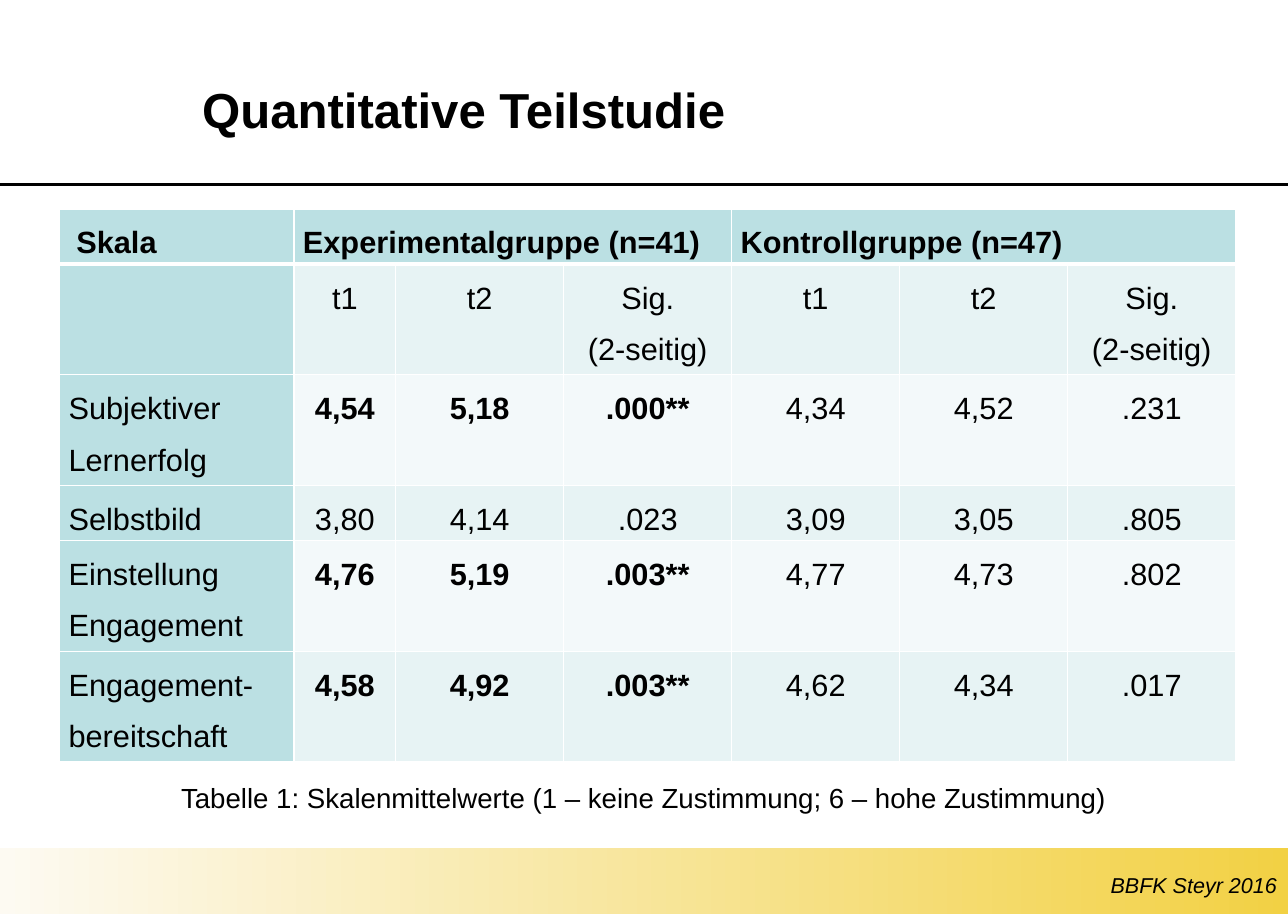
import pptx
import pptx.util
import pptx.dml.color
import pptx.enum.shapes
import pptx.enum.text
import pptx.oxml
import pptx.oxml.ns
from pptx.util import Inches

TITLE = "Quantitative Teilstudie"
CAPTION = "Tabelle 1: Skalenmittelwerte (1 – keine Zustimmung; 6 – hohe Zustimmung)"
FOOTER = "BBFK Steyr 2016"
MEASURES = ["t1", "t2", "Sig.\v(2-seitig)"]
ROWS = [
    ["Skala", "Experimentalgruppe (n=41)", "", "", "Kontrollgruppe (n=47)", "", ""],
    ["", *MEASURES, *MEASURES],
    ["Subjektiver Lernerfolg", "4,54", "5,18", ".000**", "4,34", "4,52", ".231"],
    ["Selbstbild", "3,80", "4,14", ".023", "3,09", "3,05", ".805"],
    ["Einstellung Engagement", "4,76", "5,19", ".003**", "4,77", "4,73", ".802"],
    ["Engagement-bereitschaft", "4,58", "4,92", ".003**", "4,62", "4,34", ".017"],
]
COL_WIDTHS = [2.12, 0.92] + [1.52] * 5
ROW_HEIGHTS = [0.49, 1, 1, 0.5, 1, 1]
GROUP_COLS = [(1, 3), (4, 6)]
THEME = {
    "font": "Arial", "text": "000000", "border": "FFFFFF",
    "head": "BBE0E3", "bands": ["F3F9FA", "E7F3F4"],
    "bar": ["FDFAF2", "F2D144"],
    "title": 32, "table": 20, "caption": 18, "footer": 14,
}
ALIGN = pptx.enum.text.PP_ALIGN
ANCHOR = pptx.enum.text.MSO_ANCHOR
WIDTH, HEIGHT = 11.65, 8.27


def color(value):
    return pptx.dml.color.RGBColor.from_string(value)


def write(tf, text, size, align=ALIGN.LEFT, bold=False, italic=False, spacing=None):
    p = tf.paragraphs[0]
    p.text = text
    p.alignment = align
    p.line_spacing = spacing
    for font in [p.font] + [r.font for r in p.runs]:
        font.name = THEME["font"]
        font.size = pptx.util.Pt(size)
        font.bold = bold
        font.italic = italic
        font.color.rgb = color(THEME["text"])


def add_text(s, box, text, size, anchor=ANCHOR.TOP, wrap=True, **fmt):
    tf = s.shapes.add_textbox(*map(Inches, box)).text_frame
    tf.word_wrap = wrap
    tf.vertical_anchor = anchor
    write(tf, text, size, **fmt)


def set_borders(cell, top, bottom):
    tc_pr = cell._tc.get_or_add_tcPr()
    for side, points in zip("LRTB", (1, 1, top, bottom)):
        tc_pr.append(pptx.oxml.parse_xml(
            f'<a:ln{side} {pptx.oxml.ns.nsdecls("a")} w="{pptx.util.Pt(points)}"><a:solidFill>'
            f'<a:srgbClr val="{THEME["border"]}"/></a:solidFill></a:ln{side}>'))


def add_frame(s):
    bar = s.shapes.add_shape(pptx.enum.shapes.MSO_SHAPE.RECTANGLE,
                             *map(Inches, (0, 7.67, WIDTH, 0.6)))
    bar.shadow.inherit = False
    bar.line.fill.background()
    bar.fill.gradient()
    bar.fill.gradient_angle = 0
    for stop, position, value in zip(bar.fill.gradient_stops, (0, 1), THEME["bar"]):
        stop.position = position
        stop.color.rgb = color(value)
    rule = s.shapes.add_connector(pptx.enum.shapes.MSO_CONNECTOR.STRAIGHT,
                                  *map(Inches, (0, 1.67, WIDTH, 1.67)))
    rule.line.color.rgb = color(THEME["text"])
    rule.line.width = pptx.util.Pt(2.25)
    rule._element.spPr.append(
        pptx.oxml.parse_xml(f'<a:effectLst {pptx.oxml.ns.nsdecls("a")}/>'))
    add_text(s, (6.06, 7.84, 5.59, 0.35), FOOTER, THEME["footer"],
             align=ALIGN.RIGHT, italic=True)


def add_scale_table(s):
    box = map(Inches, (0.54, 1.89, sum(COL_WIDTHS), sum(ROW_HEIGHTS)))
    table = s.shapes.add_table(len(ROWS), len(COL_WIDTHS), *box).table
    for column, width in zip(table.columns, COL_WIDTHS):
        column.width = Inches(width)
    for row, height in zip(table.rows, ROW_HEIGHTS):
        row.height = Inches(height)
    for first, last in GROUP_COLS:
        table.cell(0, first).merge(table.cell(0, last))
    for i, values in enumerate(ROWS):
        significant = values[3].endswith("**")
        for j, value in enumerate(values):
            cell = table.cell(i, j)
            heading = i == 0 or j == 0
            cell.margin_left = Inches(0.15 if i == j == 0 else 0.08)
            cell.margin_right = Inches(0.08)
            cell.margin_top = cell.margin_bottom = 0
            set_borders(cell, 3 if i == 1 else 1, 3 if i == 0 else 1)
            cell.fill.solid()
            cell.fill.fore_color.rgb = color(THEME["head"] if heading else THEME["bands"][i % 2])
            write(cell.text_frame, value, THEME["table"], spacing=1.5,
                  align=ALIGN.JUSTIFY if heading else ALIGN.CENTER,
                  bold=i == 0 or (significant and 1 <= j <= 3))


def main():
    prs = pptx.Presentation()
    prs.slide_width, prs.slide_height = Inches(WIDTH), Inches(HEIGHT)
    s = prs.slides.add_slide(prs.slide_layouts[6])
    add_frame(s)
    add_scale_table(s)
    add_text(s, (1.73, 0.32, 7.87, 1.33), TITLE, THEME["title"],
             anchor=ANCHOR.MIDDLE, bold=True)
    add_text(s, (1.5, 7.02, 8.64, 0.4), CAPTION, THEME["caption"],
             anchor=ANCHOR.MIDDLE, wrap=False, align=ALIGN.CENTER)
    prs.save("out.pptx")


if __name__ == "__main__":
    main()
